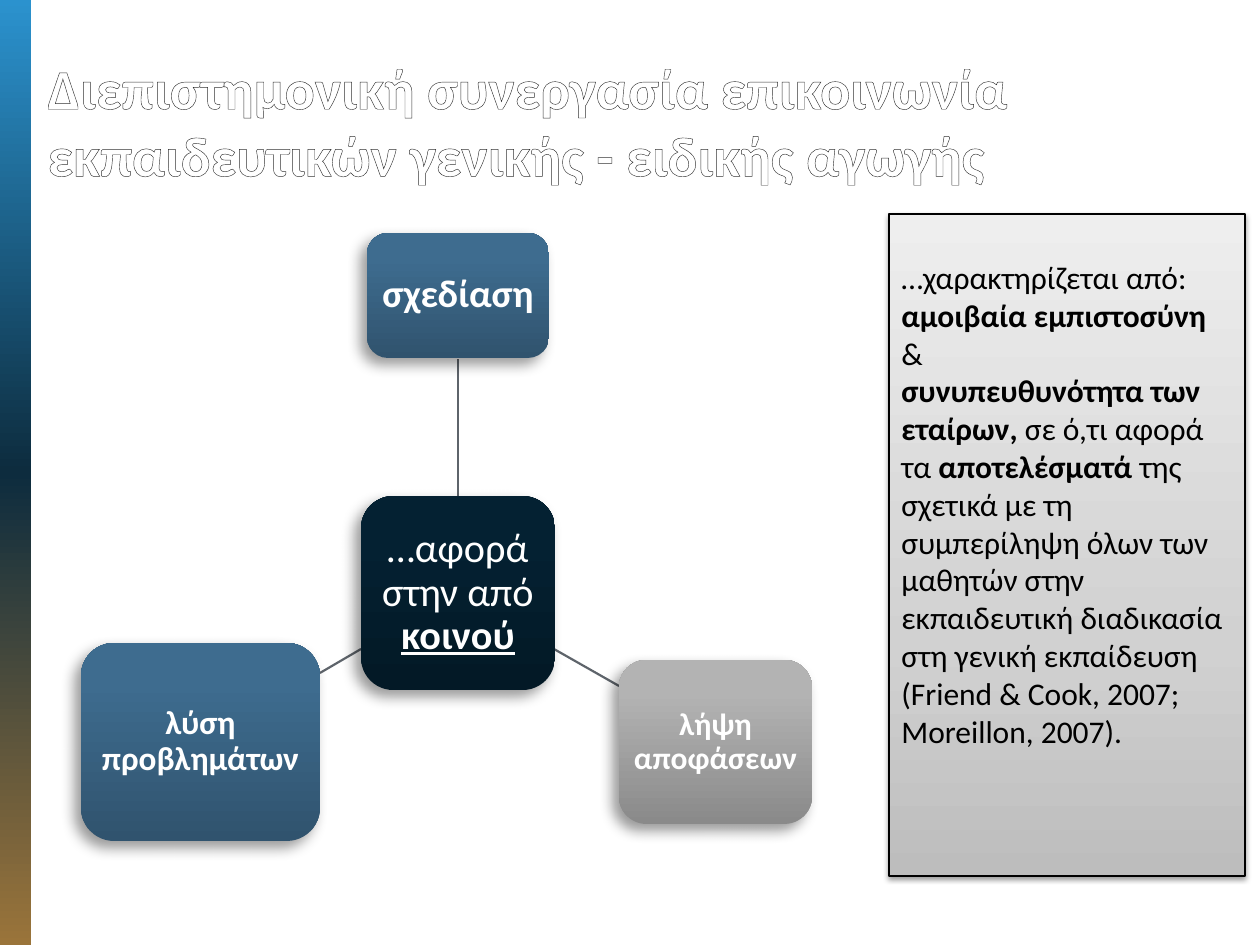
from dataclasses import dataclass
from typing import NamedTuple, Optional

from lxml import etree
from pptx import Presentation, util as u
from pptx.dml.color import RGBColor
from pptx.enum import shapes, text
from pptx.oxml import ns

EMU_PER_PX = 914400 / 126


class Span(NamedTuple):
    words: str
    bold: bool = False
    underline: bool = False


class Gradient(NamedTuple):
    stops: tuple[tuple[int, str], ...]
    angle: int = 270


class Shadow(NamedTuple):
    opacity: int
    blur: float
    distance: float
    angle: int


@dataclass(frozen=True)
class Theme:
    font: str = "Calibri"
    white: str = "FFFFFF"
    black: str = "000000"
    title_outline: str = "323232"
    spoke: str = "5E646B"
    title_size: int = 32
    panel_size: int = 18
    sidebar: Gradient = Gradient(((0, "2B92CE"), (50, "0D2C3E"), (100, "9A743A")), 90)
    navy: Gradient = Gradient(((0, "031926"), (80, "042132"), (100, "032133")))
    blue: Gradient = Gradient(((0, "30536E"), (80, "3E6C8F"), (100, "3D6C91")))
    gray: Gradient = Gradient(((0, "8A8A8A"), (80, "B3B3B3"), (100, "B3B3B3")))
    silver: Gradient = Gradient(((0, "BDBDBD"), (35, "D1D1D1"), (100, "EEEEEE")))
    node_shadow: Shadow = Shadow(40, 8, 5, 135)
    panel_shadow: Shadow = Shadow(38, 3.1, 1.6, 90)


THEME = Theme()


class Area(NamedTuple):
    left: int
    top: int
    width: int
    height: int


class Node(NamedTuple):
    area: Area
    fill: Gradient
    size: int
    inset: int
    spans: tuple[Span, ...]


class Spoke(NamedTuple):
    x1: int
    y1: int
    x2: int
    y2: int


TITLE = Span("Διεπιστημονική συνεργασία επικοινωνία "
             "εκπαιδευτικών γενικής - ειδικής αγωγής", bold=True)
NODES = (
    Node(Area(361, 496, 194, 194), THEME.navy, 23, 8,
         (Span("…αφορά στην από "), Span("κοινού", True, True))),
    Node(Area(367, 233, 182, 125), THEME.blue, 22, 8, (Span("σχεδίαση ", True),)),
    Node(Area(619, 660, 193, 164), THEME.gray, 18, 6, (Span("λήψη αποφάσεων", True),)),
    Node(Area(81, 643, 239, 198), THEME.blue, 19, 6, (Span("λύση προβλημάτων", True),)),
)
SPOKES = (Spoke(458, 496, 458, 359), Spoke(554, 649, 619, 686), Spoke(361, 649, 320, 673))
PANEL_PARAGRAPHS = (
    (Span("…χαρακτηρίζεται από:"),),
    (Span("αμοιβαία εμπιστοσύνη ", True), Span("&")),
    (Span("συνυπευθυνότητα των εταίρων, ", True), Span("σε ό,τι αφορά τα "),
     Span("αποτελέσματά ", True),
     Span("της σχετικά με τη συμπερίληψη όλων των μαθητών στην εκπαιδευτική διαδικασία "
          "στη γενική εκπαίδευση (Friend & Cook, 2007; Moreillon, 2007).")),
)


def px(length: int) -> u.Emu:
    return u.Emu(round(length * EMU_PER_PX))


def sub(parent, tag: str, **attributes):
    return etree.SubElement(parent, ns.qn(tag),
                            {key: str(value) for key, value in attributes.items()})


def set_gradient(box, gradient: Gradient) -> None:
    box.fill.background()
    properties = box.element.spPr
    fill = etree.Element(ns.qn("a:gradFill"), rotWithShape="1")
    stops = sub(fill, "a:gsLst")
    for position, color in gradient.stops:
        sub(sub(stops, "a:gs", pos=position * 1000), "a:srgbClr", val=color)
    sub(fill, "a:lin", ang=gradient.angle * 60000, scaled=0)
    properties.replace(properties.find(ns.qn("a:noFill")), fill)


def set_shadow(box, shadow: Shadow) -> None:
    effects = box.element.spPr.find(ns.qn("a:effectLst"))
    outer = sub(effects, "a:outerShdw", blurRad=int(u.Pt(shadow.blur)),
                dist=int(u.Pt(shadow.distance)), dir=shadow.angle * 60000,
                algn="ctr", rotWithShape=0)
    color = sub(outer, "a:srgbClr", val=THEME.black)
    sub(color, "a:alpha", val=shadow.opacity * 1000)


def add_box(page, kind, area: Area, fill: Gradient, shadow: Optional[Shadow] = None,
            line: Optional[str] = None):
    box = page.shapes.add_shape(kind, *map(px, area))
    set_gradient(box, fill)
    if line:
        box.line.color.rgb = RGBColor.from_string(line)
        box.line.width = u.Pt(0.75)
    else:
        box.line.fill.background()
    box.shadow.inherit = False
    if shadow:
        set_shadow(box, shadow)
    return box


def add_span(para, span: Span, size: int, color: str):
    run = para.add_run()
    run.text = span.words
    font = run.font
    font.name, font.size = THEME.font, u.Pt(size)
    font.bold, font.underline = span.bold, span.underline
    font.color.rgb = RGBColor.from_string(color)
    return run


def add_title(page) -> None:
    title = page.shapes.title
    title.left, title.top, title.width, title.height = map(px, Area(35, 37, 1225, 157))
    frame = title.text_frame
    frame.auto_size = text.MSO_AUTO_SIZE.NONE
    frame.vertical_anchor = text.MSO_ANCHOR.BOTTOM
    para = frame.paragraphs[0]
    para.alignment = text.PP_ALIGN.LEFT
    run = add_span(para, TITLE, THEME.title_size, THEME.white)
    outline = etree.Element(ns.qn("a:ln"), w=str(int(u.Pt(1))))
    sub(sub(outline, "a:solidFill"), "a:srgbClr", val=THEME.title_outline)
    run.font._element.insert(0, outline)


def add_spoke(page, spoke: Spoke) -> None:
    line = page.shapes.add_connector(shapes.MSO_CONNECTOR.STRAIGHT, *map(px, spoke))
    line.line.color.rgb = RGBColor.from_string(THEME.spoke)
    line.line.width = u.Pt(1.25)
    sub(line.element.spPr, "a:effectLst")


def add_node(page, node: Node) -> None:
    box = add_box(page, shapes.MSO_SHAPE.ROUNDED_RECTANGLE, node.area, node.fill,
                  THEME.node_shadow)
    frame = box.text_frame
    frame.word_wrap = True
    frame.vertical_anchor = text.MSO_ANCHOR.MIDDLE
    frame.margin_left = frame.margin_right = px(node.inset)
    frame.margin_top = frame.margin_bottom = px(node.inset)
    para = frame.paragraphs[0]
    para.alignment = text.PP_ALIGN.CENTER
    para.line_spacing = 0.9
    for span in node.spans:
        add_span(para, span, node.size, THEME.white)


def add_panel(page) -> None:
    box = add_box(page, shapes.MSO_SHAPE.RECTANGLE, Area(889, 214, 356, 662),
                  THEME.silver, THEME.panel_shadow, THEME.black)
    frame = box.text_frame
    frame.word_wrap = True
    frame.vertical_anchor = text.MSO_ANCHOR.TOP
    frame.margin_top = px(44)
    for index, spans in enumerate(PANEL_PARAGRAPHS):
        para = frame.add_paragraph() if index else frame.paragraphs[0]
        para.alignment = text.PP_ALIGN.LEFT
        for span in spans:
            add_span(para, span, THEME.panel_size, THEME.black)


def main() -> None:
    deck = Presentation()
    deck.slide_width, deck.slide_height = px(1260), px(945)
    page = deck.slides.add_slide(deck.slide_layouts[5])
    add_box(page, shapes.MSO_SHAPE.RECTANGLE, Area(0, 0, 31, 945), THEME.sidebar)
    add_title(page)
    for spoke in SPOKES:
        add_spoke(page, spoke)
    for node in NODES:
        add_node(page, node)
    add_panel(page)
    deck.save("out.pptx")


if __name__ == "__main__":
    main()
